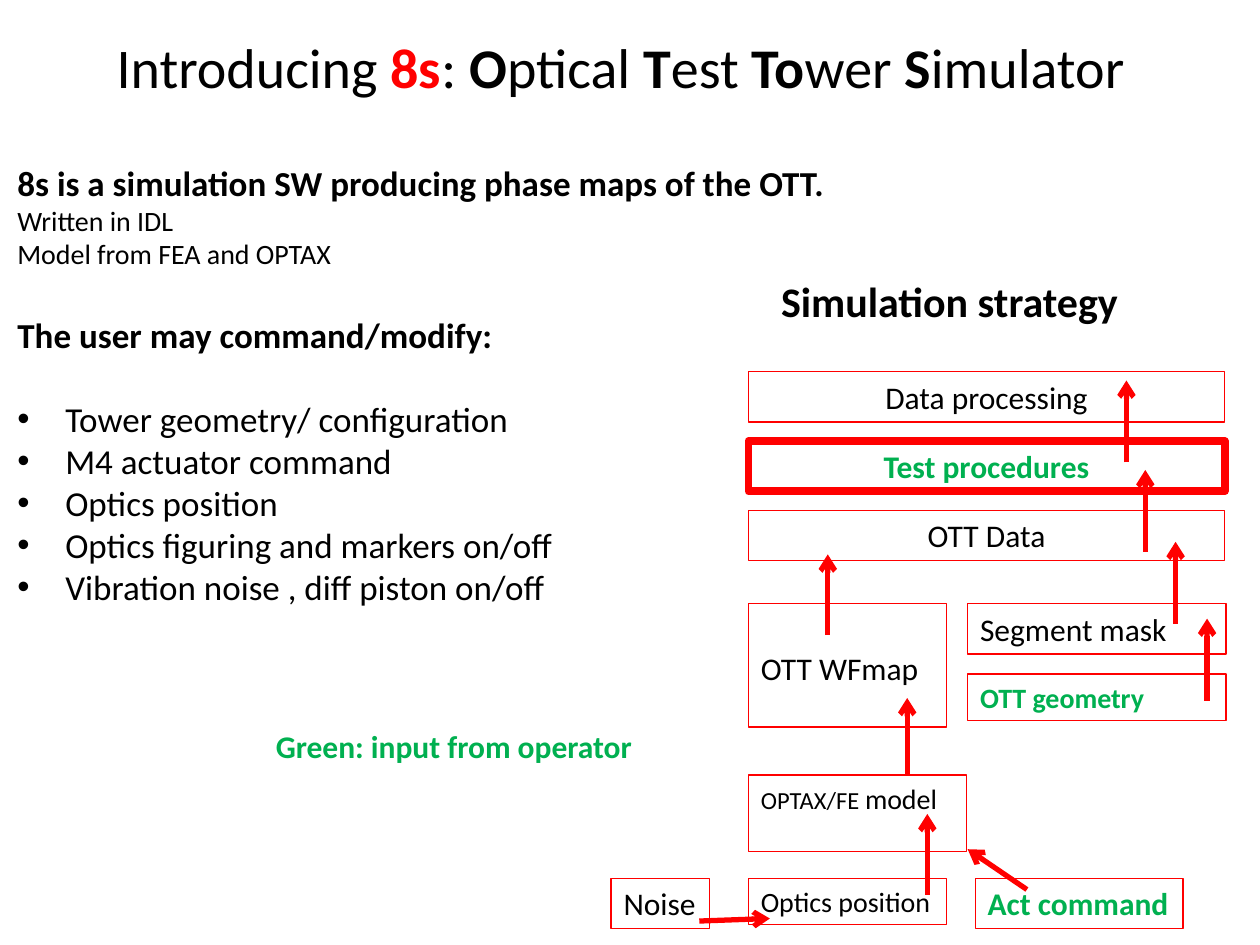
from pptx import Presentation
from pptx.dml.color import RGBColor
from pptx.enum.shapes import MSO_CONNECTOR, MSO_SHAPE
from pptx.enum.text import MSO_AUTO_SIZE, MSO_ANCHOR, PP_ALIGN
from pptx.oxml.ns import qn
from pptx.util import Inches, Pt
from lxml.etree import SubElement

FONT = "Calibri"
BLACK, RED, GREEN = "000000", "FF0000", "00B050"


def rgb(value):
    return RGBColor.from_string(value)


def add_run(p, text, size=18, color=BLACK, bold=False):
    r = p.add_run()
    r.text = text
    r.font.name, r.font.size, r.font.bold = FONT, Pt(size), bold
    r.font.color.rgb = rgb(color)


def frame_text(sp, wrap=True):
    tf = sp.text_frame
    tf.word_wrap = wrap
    tf.auto_size = MSO_AUTO_SIZE.SHAPE_TO_FIT_TEXT
    tf.vertical_anchor = MSO_ANCHOR.TOP
    return tf


def add_text(slide, box, wrap=True):
    return frame_text(slide.shapes.add_textbox(*map(Inches, box)), wrap)


def add_label(slide, box, text, **fmt):
    add_run(add_text(slide, box, wrap=False).paragraphs[0], text, **fmt)


def add_block(slide, box, runs, centered=False, border=0.75, wrap=True, top=0.05):
    """Red outlined block; runs is a list of (text, format)."""
    sp = slide.shapes.add_shape(MSO_SHAPE.RECTANGLE, *map(Inches, box))
    sp.shadow.inherit = False
    sp.fill.background()
    sp.line.color.rgb = rgb(RED)
    sp.line.width = Pt(border)
    tf = frame_text(sp, wrap)
    tf.margin_top = Inches(top)
    p = tf.paragraphs[0]
    p.alignment = PP_ALIGN.CENTER if centered else PP_ALIGN.LEFT
    for text, fmt in runs:
        add_run(p, text, **fmt)


def add_arrow(slide, x1, y1, x2, y2):
    line = slide.shapes.add_connector(
        MSO_CONNECTOR.STRAIGHT, *map(Inches, (x1, y1, x2, y2)))
    line.line.color.rgb = rgb(RED)
    line.line.width = Pt(3)
    SubElement(line.line._get_or_add_ln(), qn("a:tailEnd"), type="arrow")
    SubElement(line._element.spPr, qn("a:effectLst"))


def add_bullet(p):
    pPr = p._p.get_or_add_pPr()
    pPr.set("marL", str(Inches(0.38)))
    pPr.set("indent", str(-Inches(0.38)))
    SubElement(pPr, qn("a:buFont"), typeface="Arial")
    SubElement(pPr, qn("a:buChar"), char="•")


def title(slide, box):
    p = add_text(slide, box).paragraphs[0]
    p.alignment = PP_ALIGN.CENTER
    add_run(p, "Introducing ", size=32)
    add_run(p, "8s", size=32, color=RED, bold=True)
    add_run(p, ": ", size=32)
    # Bold letters spell the acronym
    for initial, rest in (("O", "ptical "), ("T", "est "), ("To", "wer "), ("S", "imulator")):
        add_run(p, initial, size=32, bold=True)
        add_run(p, rest, size=32)


def overview(slide, box):
    tf = add_text(slide, box)
    gap = 24.4  # one line of 20 pt text
    p = tf.paragraphs[0]
    add_run(p, "8s is a simulation SW producing phase maps of the OTT.", size=20, bold=True)
    for text in ("Written in IDL", "Model from FEA and OPTAX"):
        add_run(tf.add_paragraph(), text, size=16)
    p = tf.add_paragraph()
    p.space_before = Pt(gap)
    add_run(p, "The user may command/modify:", size=20, bold=True)
    items = ("Tower geometry/ configuration", "M4 actuator command", "Optics position",
             "Optics figuring and markers on/off", "Vibration noise , diff piston on/off")
    for i, text in enumerate(items):
        p = tf.add_paragraph()
        if i == 0:
            p.space_before = Pt(gap)
        add_bullet(p)
        add_run(p, text, size=20)


def strategy(slide, left, top, width):
    add_label(slide, (left + 0.16, top - 0.81, 2.91, 0.5), "Simulation strategy",
              size=24, bold=True)
    plain, small = dict(size=18), dict(size=16)
    green = dict(size=18, color=GREEN, bold=True)

    # Full-width stages, evenly spaced
    stages = (("Data processing", plain, 0.75), ("Test procedures", green, 4.5),
              ("OTT Data", plain, 0.75))
    for i, (text, fmt, border) in enumerate(stages):
        add_block(slide, (left, top + i * 0.55, width, 0.4), [(text, fmt)],
                  centered=True, border=border)

    # Maps and geometry
    row, right = top + 1.84, left + 1.74
    add_block(slide, (left, row, 1.57, 0.98), [("OTT WFmap", plain)], top=0.36)
    add_block(slide, (right, row, 2.05, 0.4), [("Segment mask", plain)])
    add_block(slide, (right, row + 0.56, 2.05, 0.37),
              [("OTT geometry", dict(green, size=16))])

    # Model and its inputs
    add_block(slide, (left, top + 3.2, 1.73, 0.61),
              [("OPTAX/FE ", dict(size=14)), ("model", small)])
    row = top + 4.02
    add_block(slide, (left - 1.09, row, 0.78, 0.4), [("Noise", plain)], wrap=False)
    add_block(slide, (left, row, 1.57, 0.37), [("Optics position", small)])
    add_block(slide, (left + 1.8, row, 1.65, 0.4), [("Act command", green)], wrap=False)

    # Upward flow: x, start y, length
    for x, y, length in ((8.94, 3.67, 0.65), (9.09, 4.38, 0.65), (9.33, 4.95, 0.65),
                         (9.58, 5.56, 0.65), (6.57, 5.04, 0.64), (7.2, 6.15, 0.61),
                         (7.36, 7.1, 0.64)):
        add_arrow(slide, x, y, x, y - length)
    # Side inputs
    add_arrow(slide, 5.55, 7.31, 6.11, 7.29)
    add_arrow(slide, 8.15, 7.06, 7.68, 6.74)


def main():
    prs = Presentation()
    prs.slide_width, prs.slide_height = Inches(10), Inches(7.5)
    slide = prs.slides.add_slide(prs.slide_layouts[6])
    title(slide, (0.12, 0.21, 9.61, 0.64))
    overview(slide, (0.04, 1.23, 6.93, 4.14))
    strategy(slide, 5.94, 2.95, 3.78)
    add_label(slide, (2.09, 5.72, 3.05, 0.4), "Green: input from operator",
              color=GREEN, bold=True)
    prs.save("out.pptx")


if __name__ == "__main__":
    main()
